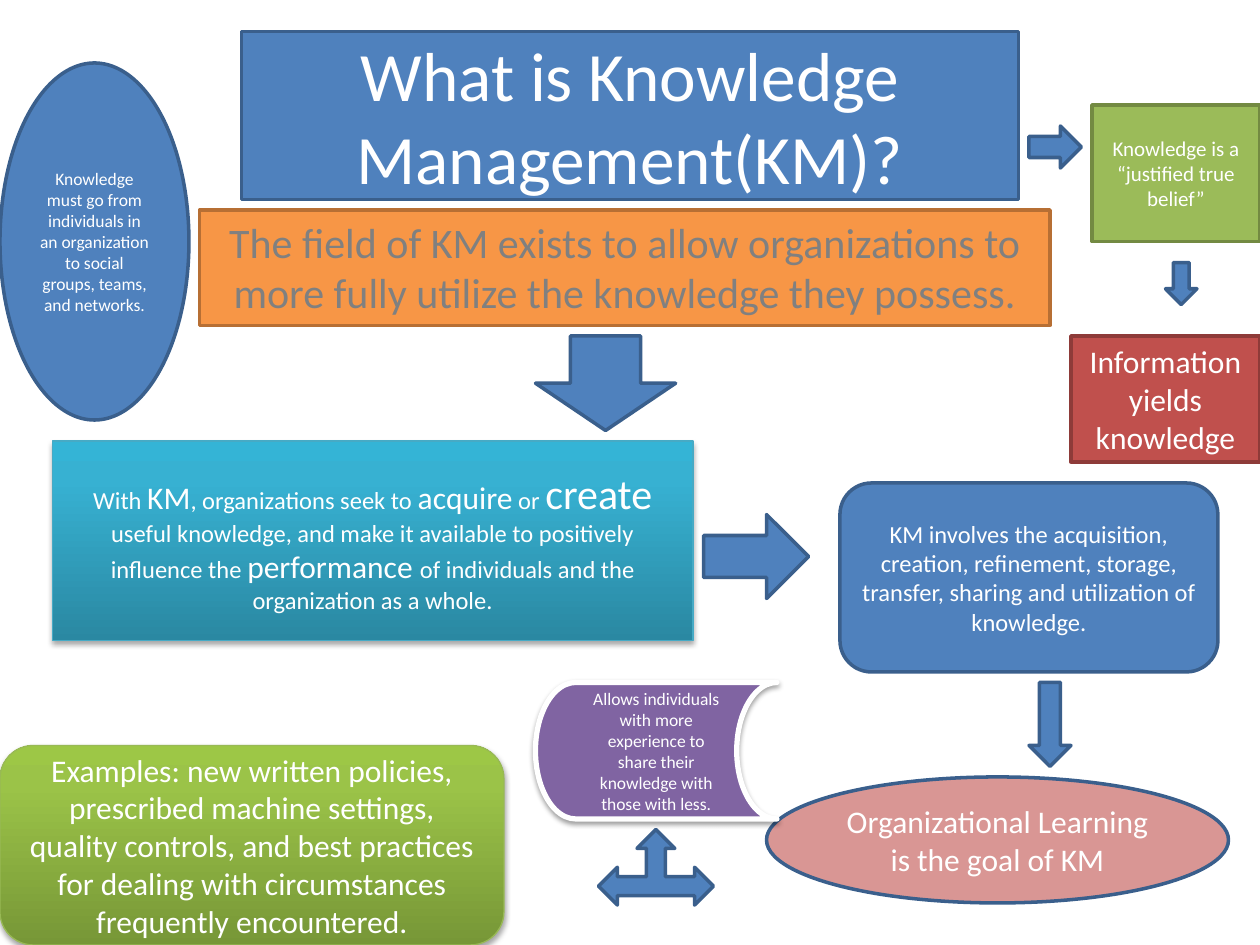
from dataclasses import dataclass

from lxml import etree
from pptx import Presentation
from pptx.dml.color import RGBColor
from pptx.enum.shapes import MSO_SHAPE
from pptx.enum.text import MSO_ANCHOR, PP_ALIGN
from pptx.oxml.ns import qn
from pptx.util import Inches, Pt

RECT = MSO_SHAPE.RECTANGLE
ROUNDED = MSO_SHAPE.ROUNDED_RECTANGLE
OVAL = MSO_SHAPE.OVAL
STORED_DATA = MSO_SHAPE.FLOWCHART_STORED_DATA
RIGHT = MSO_SHAPE.RIGHT_ARROW
DOWN = MSO_SHAPE.DOWN_ARROW
THREE_WAY = MSO_SHAPE.LEFT_RIGHT_UP_ARROW
TOP, MIDDLE = MSO_ANCHOR.TOP, MSO_ANCHOR.MIDDLE
CENTER = PP_ALIGN.CENTER

# The slide is a grid of 120 columns by 90 rows, twelve to the inch
COLUMNS, ROWS = 120, 90
CELL = Inches(1 / 12)


@dataclass(frozen=True)
class Theme:
    font: str = "Calibri"
    # Fill and outline pairs
    blue: tuple = ("4F81BD", "3A5F8C")
    orange: tuple = ("F79646", "B76F34")
    green: tuple = ("9BBB59", "738A42")
    red: tuple = ("C0504D", "8E3B39")
    pink: tuple = ("D99694", "3A5F8C")
    purple: tuple = ("8064A2", "FFFFFF")
    # Gradient stops (percent, colour) and outline
    aqua_fade: tuple = (((0, "2A88A2"), (80, "37B1D2"), (100, "34B4D6")), "46AAC5")
    lime_fade: tuple = (((0, "779737"), (80, "9BC348"), (100, "9DC746")), "98B955")
    text: str = "FFFFFF"
    muted: str = "808080"
    # Type sizes
    title: float = 39.6
    subtitle: float = 24
    large: float = 18
    body: float = 14
    small: float = 12
    tiny: float = 10
    # Line widths
    outline: float = 2
    hairline: float = 0.75
    heavy: float = 3


THEME = Theme()


def add_block(slide, kind, cells, colors, line_width=THEME.outline):
    """Place a flat shape; cells are left, top, width, height on the grid."""
    block = slide.shapes.add_shape(kind, *(round(n * CELL) for n in cells))
    fill, outline = colors
    if isinstance(fill, str):
        block.fill.solid()
        block.fill.fore_color.rgb = RGBColor.from_string(fill)
    else:
        fade_upward(block, fill)
    block.line.color.rgb = RGBColor.from_string(outline)
    block.line.width = Pt(line_width)
    block.shadow.inherit = False
    return block


def fade_upward(block, stops):
    block.fill.gradient()
    gradient = block._element.spPr.find(qn("a:gradFill"))
    stop_list = gradient.find(qn("a:gsLst"))
    for old_stop in list(stop_list):
        stop_list.remove(old_stop)
    for percent, color in stops:
        stop = etree.SubElement(stop_list, qn("a:gs"), pos=str(percent * 1000))
        etree.SubElement(stop, qn("a:srgbClr"), val=color)
    gradient.find(qn("a:lin")).set("ang", str(270 * 60000))


def drop_shadow(block, opacity, distance):
    effects = block._element.spPr.find(qn("a:effectLst"))
    shadow = etree.SubElement(
        effects, qn("a:outerShdw"), blurRad=str(Pt(3.1)), dist=str(Pt(distance)),
        dir=str(90 * 60000), rotWithShape="0")
    black = etree.SubElement(shadow, qn("a:srgbClr"), val="000000")
    etree.SubElement(black, qn("a:alpha"), val=str(opacity * 1000))


def write(block, *runs, color=THEME.text, anchor=MIDDLE):
    """Fill a shape with one centred paragraph of (text, size) runs."""
    frame = block.text_frame
    frame.word_wrap = True
    frame.vertical_anchor = anchor
    if anchor == MIDDLE:
        # Centred text may use the full height of its shape
        frame.margin_top = frame.margin_bottom = 0
    paragraph = frame.paragraphs[0]
    paragraph.alignment = CENTER
    for text, size in runs:
        run = paragraph.add_run()
        run.text = text
        run.font.name = THEME.font
        run.font.size = Pt(size)
        run.font.color.rgb = RGBColor.from_string(color)


def add_heading(slide):
    title = add_block(slide, RECT, (23, 3, 74, 16), THEME.blue)
    write(title, ("What is Knowledge Management(KM)?", THEME.title))
    subtitle = add_block(slide, RECT, (19, 20, 81, 11), THEME.orange)
    write(subtitle, ("The field of KM exists to allow organizations to more fully "
                     "utilize the knowledge they possess.", THEME.subtitle),
          color=THEME.muted, anchor=TOP)


def add_statements(slide):
    statements = (
        (RECT, (104, 10, 16, 13), THEME.green, THEME.small,
         "Knowledge is a “justified true belief”"),
        (RECT, (102, 32, 18, 12), THEME.red, THEME.large,
         "Information yields knowledge"),
        (OVAL, (0, 6, 18, 34), THEME.blue, THEME.tiny,
         "Knowledge must go from individuals in an organization to social "
         "groups, teams, and networks."),
        (ROUNDED, (80, 46, 36, 18), THEME.blue, THEME.body,
         "KM involves the acquisition, creation, refinement, storage, transfer, "
         "sharing and utilization of knowledge."),
        (OVAL, (73, 74, 44, 12), THEME.pink, THEME.large,
         "Organizational Learning is the goal of KM"),
    )
    for kind, cells, colors, size, text in statements:
        write(add_block(slide, kind, cells, colors), (text, size))


def add_arrows(slide):
    for kind, cells in (
        (RIGHT, (98, 12, 5, 4)),
        (DOWN, (111, 25, 3, 4)),
        (DOWN, (51, 32, 13.35, 9)),
        (RIGHT, (67, 49, 10, 8)),
        (DOWN, (98, 65, 4, 8)),
        (THREE_WAY, (57, 79, 10.95, 7.2)),
    ):
        add_block(slide, kind, cells, THEME.blue)


def add_raised_blocks(slide):
    # What organizations seek
    purpose = add_block(slide, RECT, (5, 42, 61, 19), THEME.aqua_fade, THEME.hairline)
    drop_shadow(purpose, 35, 1.8)
    write(purpose,
          ("With ", THEME.body), ("KM", THEME.large),
          (", organizations seek to ", THEME.body), ("acquire", THEME.large),
          (" or ", THEME.body), ("create", THEME.subtitle),
          (" useful knowledge, and make it available to positively influence the ",
           THEME.body),
          ("performance ", THEME.large),
          ("of individuals and the organization as a whole.", THEME.body))

    # Examples
    examples = add_block(slide, ROUNDED, (0, 71, 48, 19), THEME.lime_fade, THEME.hairline)
    drop_shadow(examples, 35, 1.8)
    write(examples, ("Examples: new written policies, prescribed machine settings, "
                     "quality controls, and best practices for dealing with "
                     "circumstances frequently encountered.", THEME.large))

    # Sharing of experience
    sharing = add_block(slide, STORED_DATA, (51, 65, 23, 13), THEME.purple, THEME.heavy)
    drop_shadow(sharing, 38, 1.6)
    write(sharing, ("Allows individuals with more experience to share their "
                    "knowledge with those with less.", THEME.tiny))


def main():
    deck = Presentation()
    deck.slide_width, deck.slide_height = COLUMNS * CELL, ROWS * CELL
    slide = deck.slides.add_slide(deck.slide_layouts[6])
    add_heading(slide)
    add_statements(slide)
    add_arrows(slide)
    add_raised_blocks(slide)
    deck.save("out.pptx")


if __name__ == "__main__":
    main()
